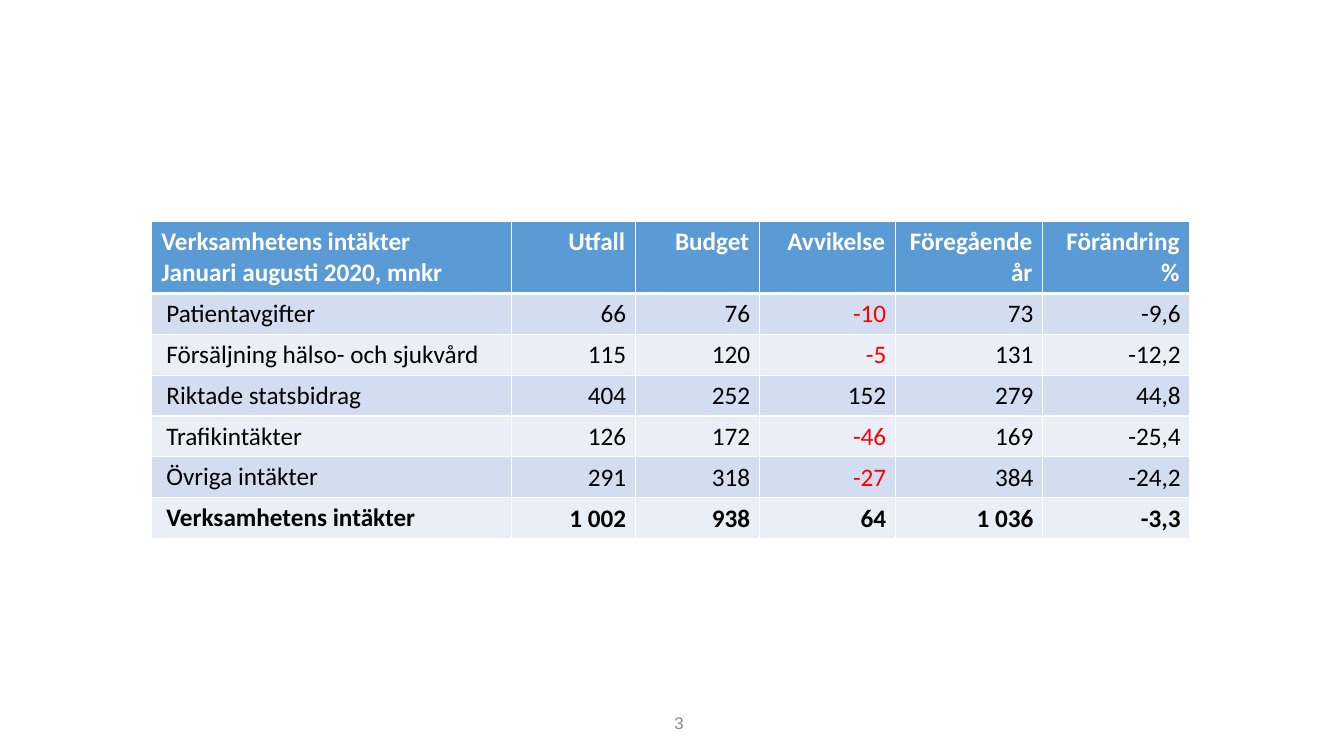
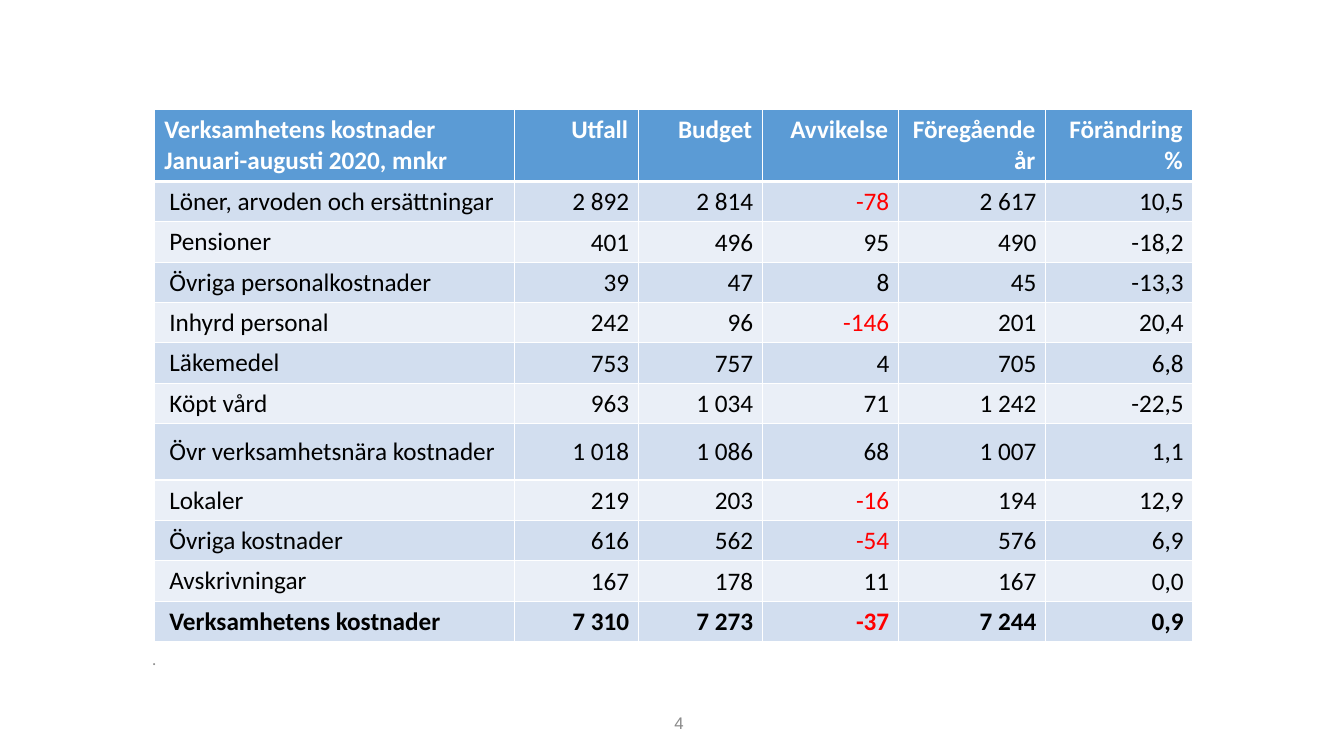
"""Build two slides with tables of regional income and costs against budget."""
from lxml import etree
from pptx import Presentation
from pptx.dml.color import RGBColor
from pptx.enum.text import MSO_ANCHOR, PP_ALIGN
from pptx.oxml.ns import qn
from pptx.util import Inches, Pt

LEFT, RIGHT = PP_ALIGN.LEFT, PP_ALIGN.RIGHT
TOP, MIDDLE = MSO_ANCHOR.TOP, MSO_ANCHOR.MIDDLE
BLANK_LAYOUT = 6

COLORS = {
    "header": "5B9BD5",
    "band_dark": "D2DEEF",
    "band_light": "EAEFF7",
    "white": "FFFFFF",
    "text": "000000",
    "negative": "FF0000",
    "page_number": "898989",
    "note": "8C8C8C",
}
COLUMN_WIDTHS = [3.57, 1.23, 1.23, 1.35, 1.46, 1.46]
COLUMN_TITLES = ["Utfall", "Budget", "Avvikelse", "Föregående år", "Förändring %"]
DEVIATION_COLUMN = COLUMN_TITLES.index("Avvikelse") + 1
HEADER_HEIGHT, ROW_HEIGHT, TALL_ROW_HEIGHT = 0.71, 0.4, 0.56
TALL_ROW = "Övr verksamhetsnära kostnader"

TABLES = [
    {
        "page": "3",
        "position": (1.5, 2.2),
        "heading": "Verksamhetens intäkter\nJanuari augusti 2020, mnkr",
        "rows": [
            ["Patientavgifter", "66", "76", "-10", "73", "-9,6"],
            ["Försäljning hälso- och sjukvård", "115", "120", "-5", "131", "-12,2"],
            ["Riktade statsbidrag", "404", "252", "152", "279", "44,8"],
            ["Trafikintäkter", "126", "172", "-46", "169", "-25,4"],
            ["Övriga intäkter", "291", "318", "-27", "384", "-24,2"],
            ["Verksamhetens intäkter", "1 002", "938", "64", "1 036", "-3,3"],
        ],
    },
    {
        "page": "4",
        "position": (1.53, 1.09),
        "heading": "Verksamhetens kostnader\nJanuari-augusti 2020, mnkr",
        "rows": [
            ["Löner, arvoden och ersättningar", "2 892", "2 814", "-78", "2 617", "10,5"],
            ["Pensioner", "401", "496", "95", "490", "-18,2"],
            ["Övriga personalkostnader", "39", "47", "8", "45", "-13,3"],
            ["Inhyrd personal", "242", "96", "-146", "201", "20,4"],
            ["Läkemedel", "753", "757", "4", "705", "6,8"],
            ["Köpt vård", "963", "1 034", "71", "1 242", "-22,5"],
            [TALL_ROW, "1 018", "1 086", "68", "1 007", "1,1"],
            ["Lokaler", "219", "203", "-16", "194", "12,9"],
            ["Övriga kostnader", "616", "562", "-54", "576", "6,9"],
            ["Avskrivningar", "167", "178", "11", "167", "0,0"],
            ["Verksamhetens kostnader", "7 310", "7 273", "-37", "7 244", "0,9"],
        ],
    },
]


def write_text(frame, text, size=18, font="Calibri", color="text", bold=False,
               align=LEFT, anchor=TOP):
    frame.word_wrap = True
    frame.vertical_anchor = anchor
    frame.text = text
    for paragraph in frame.paragraphs:
        paragraph.alignment = align
        paragraph.font.size = Pt(size)
        paragraph.font.name = font
        paragraph.font.bold = bold
        paragraph.font.color.rgb = RGBColor.from_string(COLORS[color])


def format_cell(cell, fill, top_width, bottom_width):
    properties = cell._tc.get_or_add_tcPr()
    widths = {"a:lnL": 1, "a:lnR": 1, "a:lnT": top_width, "a:lnB": bottom_width}
    for tag, width in widths.items():
        line = etree.SubElement(properties, qn(tag), w=str(Pt(width)))
        solid = etree.SubElement(line, qn("a:solidFill"))
        etree.SubElement(solid, qn("a:srgbClr"), val=COLORS["white"])
    cell.fill.solid()
    cell.fill.fore_color.rgb = RGBColor.from_string(COLORS[fill])


presentation = Presentation()
presentation.slide_width = Inches(13.33)
presentation.slide_height = Inches(7.5)

for content in TABLES:
    slide = presentation.slides.add_slide(presentation.slide_layouts[BLANK_LAYOUT])
    rows = [[content["heading"], *COLUMN_TITLES], *content["rows"]]
    heights = [HEADER_HEIGHT] + [
        TALL_ROW_HEIGHT if row[0] == TALL_ROW else ROW_HEIGHT for row in content["rows"]
    ]
    left, top = content["position"]
    table = slide.shapes.add_table(
        len(rows), len(COLUMN_WIDTHS), Inches(left), Inches(top),
        Inches(sum(COLUMN_WIDTHS)), Inches(sum(heights))).table
    table.horz_banding = False
    for column, width in zip(table.columns, COLUMN_WIDTHS):
        column.width = Inches(width)

    for row_index, values in enumerate(rows):
        table.rows[row_index].height = Inches(heights[row_index])
        is_header = row_index == 0
        is_total = row_index == len(rows) - 1
        band = "band_dark" if row_index % 2 else "band_light"
        for column_index, value in enumerate(values):
            cell = table.cell(row_index, column_index)
            format_cell(cell, "header" if is_header else band,
                        top_width=3 if row_index == 1 else 1,
                        bottom_width=3 if is_header else 1)
            color = "white" if is_header else "text"
            if column_index == DEVIATION_COLUMN and value.startswith("-"):
                color = "negative"
            write_text(cell.text_frame, value, color=color, bold=is_header or is_total,
                       align=RIGHT if column_index else LEFT)
            if is_header:
                continue
            cell.vertical_anchor = MIDDLE
            if column_index:
                cell.margin_left = cell.margin_top = Inches(0.01)
                cell.margin_right, cell.margin_bottom = Inches(0.09), 0
            else:
                cell.margin_left = Inches(0.15)

    page_box = slide.shapes.add_textbox(Inches(6.17), Inches(6.97), Inches(0.71), Inches(0.4))
    write_text(page_box.text_frame, content["page"], size=12, font="Arial",
               color="page_number", align=RIGHT, anchor=MIDDLE)

note_box = slide.shapes.add_textbox(Inches(1.41), Inches(6.39), Inches(8.18), Inches(0.5))
write_text(note_box.text_frame, ".", size=12, color="note")

presentation.save("out.pptx")
